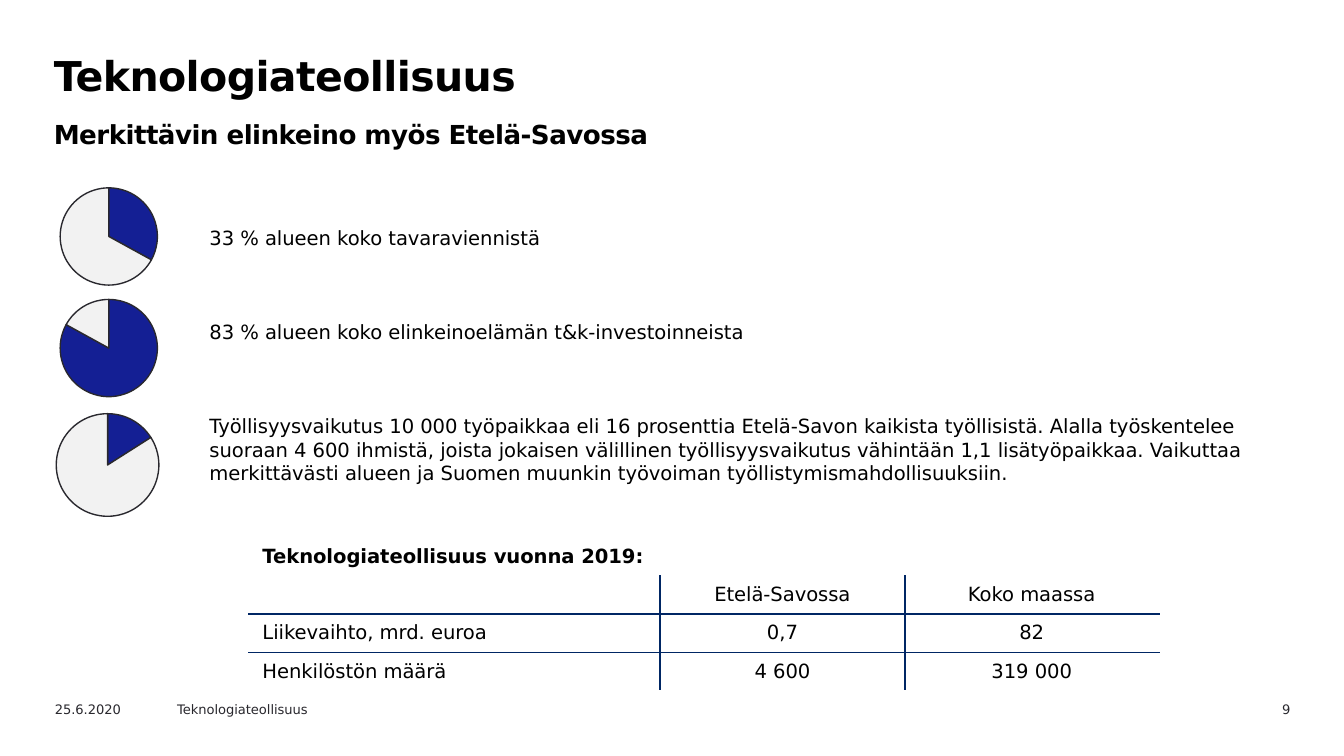
from lxml.etree import SubElement
from pptx import Presentation
from pptx.chart.data import CategoryChartData
from pptx.dml.color import RGBColor
from pptx.enum.chart import XL_CHART_TYPE as ChartType
from pptx.enum.text import MSO_ANCHOR as Anchor, PP_ALIGN as Align
from pptx.oxml.ns import qn
from pptx.util import Pt

FONT = "DejaVu Sans"
COLORS = {
    "text": "000000",
    "footer": "29282E",
    "share": "141F94",
    "rest": "F2F2F2",
    "grid": "002664",
}
TITLE = [("Teknologiateollisuus", 22), ("Merkittävin elinkeino myös Etelä-Savossa", 14)]
FACTS = [
    "33 % alueen koko tavaraviennistä",
    "83 % alueen koko elinkeinoelämän t&k-investoinneista",
    "Työllisyysvaikutus 10 000 työpaikkaa eli 16 prosenttia Etelä-Savon kaikista "
    "työllisistä. Alalla työskentelee suoraan 4 600 ihmistä, joista jokaisen välillinen "
    "työllisyysvaikutus vähintään 1,1 lisätyöpaikkaa. Vaikuttaa merkittävästi alueen ja "
    "Suomen muunkin työvoiman työllistymismahdollisuuksiin.",
]
PIES = [(33, 22.3, 90.7, 72), (83, 22.3, 150.5, 72), (16, 20.2, 211.7, 74.9)]
ROWS = [
    ["Teknologiateollisuus vuonna 2019:", "", ""],
    ["", "Etelä-Savossa", "Koko maassa"],
    ["Liikevaihto, mrd. euroa", "0,7", "82"],
    ["Henkilöstön määrä", "4 600", "319 000"],
]
COLUMN_WIDTHS = [220.3, 131, 136.1]
ROW_HEIGHT = 20.5
FOOTERS = [
    ("25.6.2020", 22.3, 72, Align.LEFT),
    ("Teknologiateollisuus", 87.8, 102.2, Align.LEFT),
    ("9", 630.7, 67.7, Align.RIGHT),
]


def color(name):
    return RGBColor.from_string(COLORS[name])


def style(font, size, name="text", bold=False):
    font.name = FONT
    font.size = Pt(size)
    font.bold = bold
    font.color.rgb = color(name)


def add_title(page):
    box = page.shapes.title
    box.left, box.top, box.width, box.height = Pt(20.2), Pt(22.8), Pt(629.3), Pt(60)
    frame = box.text_frame
    frame.word_wrap = True
    frame.vertical_anchor = Anchor.TOP
    frame.text = "\n".join(text for text, size in TITLE)
    for para, (text, size) in zip(frame.paragraphs, TITLE):
        para.alignment = Align.LEFT
        para.line_spacing = Pt(27)
        para.space_before = Pt(0)
        para._p.get_or_add_pPr().set("marL", str(Pt(1.4)))
        style(para.font, size, bold=True)
        for span in para.runs:
            span.font._element.set("spc", "-30")


def add_text(page, lines, left, top, width, height):
    box = page.shapes.add_textbox(Pt(left), Pt(top), Pt(width), Pt(height))
    box.text_frame.word_wrap = True
    box.text_frame.text = "\n".join(lines)
    return box.text_frame.paragraphs


def add_facts(page):
    paras = add_text(page, FACTS, 105.1, 117.4, 589.7, 174.2)
    for index, para in enumerate(paras):
        para.line_spacing = Pt(12.6)
        para.space_before = Pt(37.8 if index else 0)
        style(para.font, 10.5)


def add_footer(page, text, left, width, align):
    para = add_text(page, [text], left, 372.2, width, 13)[0]
    para.alignment = align
    style(para.font, 7, "footer")


def add_pie(page, share, left, top, size):
    data = CategoryChartData()
    data.categories = ["1", "2"]
    data.add_series("Series 1", [share, 100 - share])
    frame = page.shapes.add_chart(ChartType.PIE, Pt(left), Pt(top), Pt(size), Pt(size), data)
    chart = frame.chart
    chart.has_legend = False
    chart.has_title = False
    style(chart.font, 18, "footer")
    plot = chart.plots[0]
    plot.vary_by_categories = True
    for index, name in enumerate(["share", "rest"]):
        slice_format = plot.series[0].points[index].format
        slice_format.fill.solid()
        slice_format.fill.fore_color.rgb = color(name)
        slice_format.line.color.rgb = color("footer")
        slice_format.line.width = Pt(0.75)


def add_border(cell, side):
    line = SubElement(cell._tc.get_or_add_tcPr(), qn(f"a:ln{side}"), w=str(Pt(1)))
    fill = SubElement(line, qn("a:solidFill"))
    SubElement(fill, qn("a:srgbClr"), val=COLORS["grid"])


def inner_sides(row, column):
    last_row, last_column = len(ROWS) - 1, len(COLUMN_WIDTHS) - 1
    rules = {
        "L": row > 0 and column > 0,
        "R": row > 0 and column < last_column,
        "T": row > 1,
        "B": 0 < row < last_row,
    }
    return [side for side, shown in rules.items() if shown]


def fill_cell(cell, text, row, column):
    cell.vertical_anchor = Anchor.MIDDLE
    for side in inner_sides(row, column):
        add_border(cell, side)
    cell.fill.background()
    para = cell.text_frame.paragraphs[0]
    para.alignment = Align.CENTER if column else Align.LEFT
    style(para.font, 10.5, bold=row == 0)
    if text:
        para.add_run().text = text
    else:
        SubElement(para._p, qn("a:endParaRPr"), sz="1050")


def add_key_table(page):
    frame = page.shapes.add_table(
        len(ROWS), len(COLUMN_WIDTHS), Pt(133.4), Pt(288),
        Pt(sum(COLUMN_WIDTHS)), Pt(ROW_HEIGHT * len(ROWS)),
    )
    table = frame.table
    table.first_row = table.horz_banding = False
    for column, width in zip(table.columns, COLUMN_WIDTHS):
        column.width = Pt(width)
    for row_index, texts in enumerate(ROWS):
        table.rows[row_index].height = Pt(ROW_HEIGHT)
        for column_index, text in enumerate(texts):
            fill_cell(table.cell(row_index, column_index), text, row_index, column_index)
    table.cell(0, 0).merge(table.cell(0, 2))


def main():
    deck = Presentation()
    deck.slide_width, deck.slide_height = Pt(720), Pt(405)
    page = deck.slides.add_slide(deck.slide_layouts[5])
    add_title(page)
    add_facts(page)
    for pie in PIES:
        add_pie(page, *pie)
    add_key_table(page)
    for footer in FOOTERS:
        add_footer(page, *footer)
    deck.save("out.pptx")


if __name__ == "__main__":
    main()
